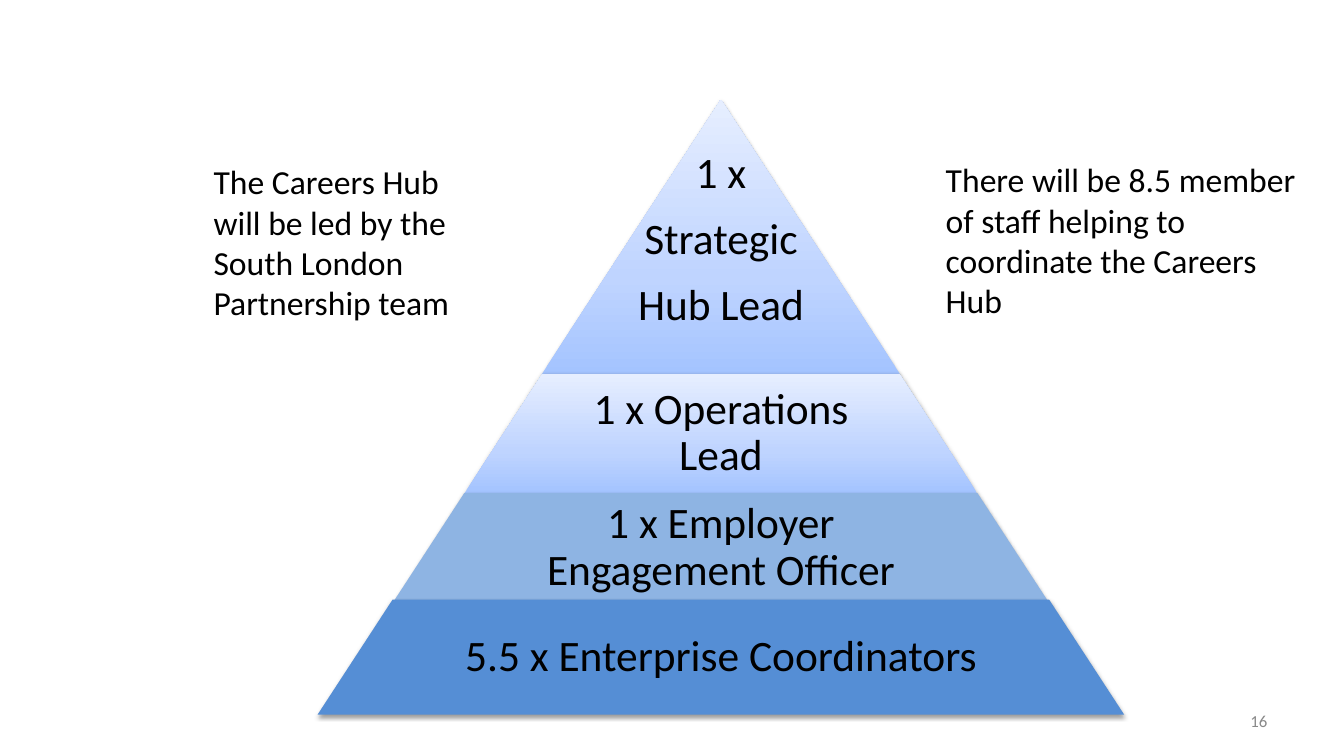
from copy import deepcopy
from dataclasses import dataclass

from lxml import etree
from pptx import Presentation
from pptx.dml.color import RGBColor
from pptx.enum.shapes import MSO_SHAPE
from pptx.enum.text import MSO_ANCHOR, MSO_AUTO_SIZE, PP_ALIGN
from pptx.oxml.ns import qn
from pptx.util import Inches, Pt


@dataclass(frozen=True)
class Theme:
    font: str = "Calibri"
    ink: str = "000000"
    muted: str = "898989"
    pale: tuple = ((0, "A4C4FF"), (0.35, "BFD4FF"), (1, "E6EEFF"))
    mid: str = "8EB4E3"
    strong: str = "558ED5"
    tier_size: int = 31
    note_size: int = 24
    number_size: int = 12


theme = Theme()


def write(box, *lines, size, color=theme.ink, align=PP_ALIGN.LEFT,
          anchor=MSO_ANCHOR.MIDDLE, inset=None, spacing=1.0, gap=0):
    """Fill a box with one paragraph per line, gap points apart."""
    frame = box.text_frame
    frame.word_wrap = True
    frame.auto_size = MSO_AUTO_SIZE.NONE
    frame.vertical_anchor = anchor
    if inset is not None:
        frame.margin_left = frame.margin_right = Inches(inset)
        frame.margin_top = frame.margin_bottom = Inches(inset)
    for i, line in enumerate(lines):
        paragraph = frame.add_paragraph() if i else frame.paragraphs[0]
        paragraph.alignment = align
        paragraph.line_spacing = spacing
        paragraph.space_before = Pt(gap if i else 0)
        run = paragraph.add_run()
        run.text = line
        run.font.name = theme.font
        run.font.size = Pt(size)
        run.font.color.rgb = RGBColor.from_string(color)


def paint_tier(tier, fill):
    """Give a tier its solid or upward gradient fill and a soft shadow below."""
    if isinstance(fill, str):
        tier.fill.solid()
        tier.fill.fore_color.rgb = RGBColor.from_string(fill)
    else:
        tier.fill.gradient()
        tier.fill.gradient_angle = 90
        stop_list = next(tier._element.spPr.iter(qn("a:gsLst")))
        stop_list.append(deepcopy(stop_list[-1]))
        for stop, (position, color) in zip(tier.fill.gradient_stops, fill):
            stop.position = position
            stop.color.rgb = RGBColor.from_string(color)
    tier.line.fill.background()
    tier.shadow.inherit = False
    effects = tier._element.spPr.find(qn("a:effectLst"))
    shadow = etree.SubElement(effects, qn("a:outerShdw"), blurRad=str(Pt(3.1)),
                              dist=str(Pt(1.6)), dir="5400000", rotWithShape="0")
    shadow_color = etree.SubElement(shadow, qn("a:srgbClr"), val=theme.ink)
    etree.SubElement(shadow_color, qn("a:alpha"), val="38000")


prs = Presentation()
prs.slide_width, prs.slide_height = Inches(13.33), Inches(7.5)
slide = prs.slides.add_slide(prs.slide_layouts[5])

title = slide.shapes.title
title.left, title.top = Inches(9.28), Inches(1.97)
title.width, title.height = Inches(3.81), Inches(0.82)
write(title, "There will be 8.5 member of staff helping to coordinate the Careers Hub",
      size=theme.note_size)

# Tiers from the tip down: top, height, width, label width, fill, spacing, lines
pyramid_center = 7.15
side_slope = 0.652
tiers = [
    (0.99, 2.72, 3.55, 3.55, theme.pale, 1.0, ("1 x", "Strategic", "Hub Lead")),
    (3.71, 1.18, 5.08, 3.3, theme.pale, 0.9, ("1 x Operations Lead",)),
    (4.89, 1.09, 6.51, 4.23, theme.mid, 0.9, ("1 x Employer Engagement Officer",)),
    (5.95, 1.14, 8, 5.2, theme.strong, 0.9, ("5.5 x Enterprise Coordinators",)),
]
for top, height, width, label_width, fill, spacing, lines in tiers:
    tier = slide.shapes.add_shape(
        MSO_SHAPE.TRAPEZOID, Inches(pyramid_center - width / 2), Inches(top),
        Inches(width), Inches(height))
    tier.adjustments[0] = side_slope
    paint_tier(tier, fill)
    label = slide.shapes.add_textbox(
        Inches(pyramid_center - label_width / 2), Inches(top),
        Inches(label_width), Inches(height))
    write(label, *lines, size=theme.tier_size, align=PP_ALIGN.CENTER,
          inset=0.04, spacing=spacing, gap=10)

leadership = slide.shapes.add_textbox(Inches(2.02), Inches(1.55), Inches(2.6), Inches(1.72))
write(leadership, "The Careers Hub will be led by the South London Partnership team",
      size=theme.note_size, anchor=MSO_ANCHOR.TOP)

page_number = slide.shapes.add_textbox(Inches(9.56), Inches(6.95), Inches(3.11), Inches(0.4))
write(page_number, "16", size=theme.number_size, color=theme.muted, align=PP_ALIGN.RIGHT)

prs.save("out.pptx")
